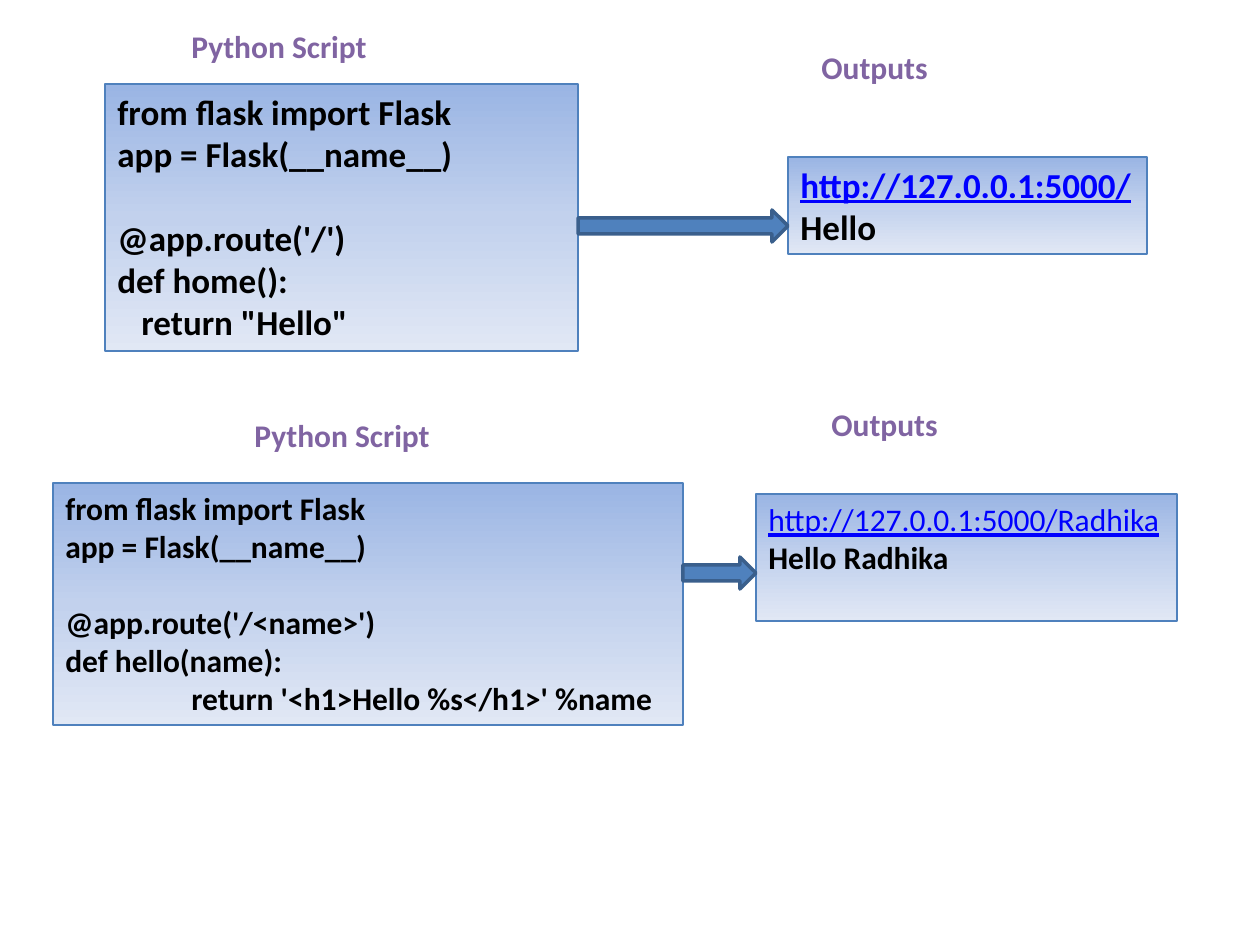
from copy import deepcopy

from pptx import Presentation
from pptx.dml.color import RGBColor
from pptx.enum.shapes import MSO_SHAPE
from pptx.enum.text import MSO_ANCHOR, PP_ALIGN
from pptx.oxml.ns import qn
from pptx.util import Emu, Pt

PX = 914400 / 126
GRADIENT = {0: "9AB5E4", 0.5: "C2D1ED", 1: "E1E8F5"}
BLACK, LINK, ACCENT, EDGE, PURPLE = "000000", "0000FF", "4F81BD", "3A5F8C", "8064A2"


def px(*lengths):
    """Turn pixel lengths into EMU."""
    return [Emu(round(length * PX)) for length in lengths]


def color(value):
    """Turn a hex string into a colour."""
    return RGBColor.from_string(value)


def add_line(para, text, size, hue, **changes):
    """Write one formatted span into a paragraph."""
    para.alignment = PP_ALIGN.LEFT
    span = para.add_run()
    span.text = text
    values = {"name": "Calibri", "size": Pt(size), "bold": True} | changes
    for name, value in values.items():
        setattr(span.font, name, value)
    span.font.color.rgb = color(hue)


def add_paragraphs(frame, count):
    """Return the given number of paragraphs of a frame."""
    return [frame.paragraphs[0]] + [frame.add_paragraph() for _ in range(count - 1)]


def add_heading(page, left, top, width, text):
    """Place a purple heading."""
    box = page.shapes.add_textbox(*px(left, top, width, 50))
    box.text_frame.word_wrap = True
    add_line(box.text_frame.paragraphs[0], text, 18, PURPLE)


def add_panel(page, place, wrap):
    """Place a gradient panel and return its text frame."""
    panel = page.shapes.add_shape(MSO_SHAPE.RECTANGLE, *px(*place))
    panel.shadow.inherit = False
    panel.fill.gradient()
    panel.fill.gradient_angle = 270
    stops = panel._element.spPr.find(qn("a:gradFill")).find(qn("a:gsLst"))
    stops.append(deepcopy(stops[0]))
    for stop, (position, hue) in zip(panel.fill.gradient_stops, GRADIENT.items()):
        stop.position = position
        stop.color.rgb = color(hue)
    panel.line.color.rgb = color(ACCENT)
    panel.line.width = Pt(0.75)
    frame = panel.text_frame
    frame.word_wrap = wrap
    frame.vertical_anchor = MSO_ANCHOR.TOP
    return frame


def add_code(page, place, route, function, result, size, indent):
    """Place a script panel with its import, route and function."""
    lines = ["from flask import Flask", "app = Flask(__name__)", route, function, result]
    paras = add_paragraphs(add_panel(page, place, True), len(lines))
    for para, text in zip(paras, lines):
        add_line(para, text, size, BLACK)
    paras[2].space_before = Pt(size * 1.22)
    paras[-1]._p.get_or_add_pPr().set("marL", str(px(indent)[0]))


def add_output(page, place, address, answer, size, bold):
    """Place an output panel with its address and answer."""
    first, second = add_paragraphs(add_panel(page, place, False), 2)
    add_line(first, address, size, LINK, bold=bold, underline=True)
    add_line(second, answer, size, BLACK)


def add_arrow(page, left, top, right):
    """Place a block arrow between two panels."""
    arrow = page.shapes.add_shape(MSO_SHAPE.RIGHT_ARROW, *px(left, top, right - left, 32))
    arrow.shadow.inherit = False
    arrow.fill.solid()
    arrow.fill.fore_color.rgb = color(ACCENT)
    arrow.line.color.rgb = color(EDGE)
    arrow.line.width = Pt(2)


def add_example(page, top, script, output, arrow_top, headings, code, answer):
    """Place one script, its output, their headings and the arrow between."""
    script_place, output_place = [(x, top + y, w, h) for x, y, w, h in (script, output)]
    add_code(page, script_place, **code)
    add_output(page, output_place, **answer)
    add_arrow(page, script[0] + script[2], top + arrow_top, output[0])
    for (left, offset, width), text in zip(headings, ("Python Script", "Outputs")):
        add_heading(page, left, top + offset, width, text)


def main():
    """Build the slide and save it."""
    deck = Presentation()
    deck.slide_width, deck.slide_height = px(1260, 945)
    page = deck.slides.add_slide(deck.slide_layouts[6])
    add_example(
        page, 0, (105, 84, 473, 267), (788, 157, 359, 97), 210,
        [(179, 21, 315), (809, 42, 273)],
        {"route": "@app.route('/')", "function": "def home():",
         "result": 'return "Hello"', "size": 20, "indent": 24},
        {"address": "http://127.0.0.1:5000/", "answer": "Hello", "size": 20, "bold": True},
    )
    add_example(
        page, 399, (53, 84, 630, 242), (756, 95, 421, 127), 158,
        [(242, 11, 209), (819, 0, 273)],
        {"route": "@app.route('/<name>')", "function": "def hello(name):",
         "result": "return '<h1>Hello %s</h1>' %name", "size": 18, "indent": 126},
        {"address": "http://127.0.0.1:5000/Radhika", "answer": "Hello Radhika",
         "size": 18, "bold": False},
    )
    deck.save("out.pptx")


if __name__ == "__main__":
    main()
